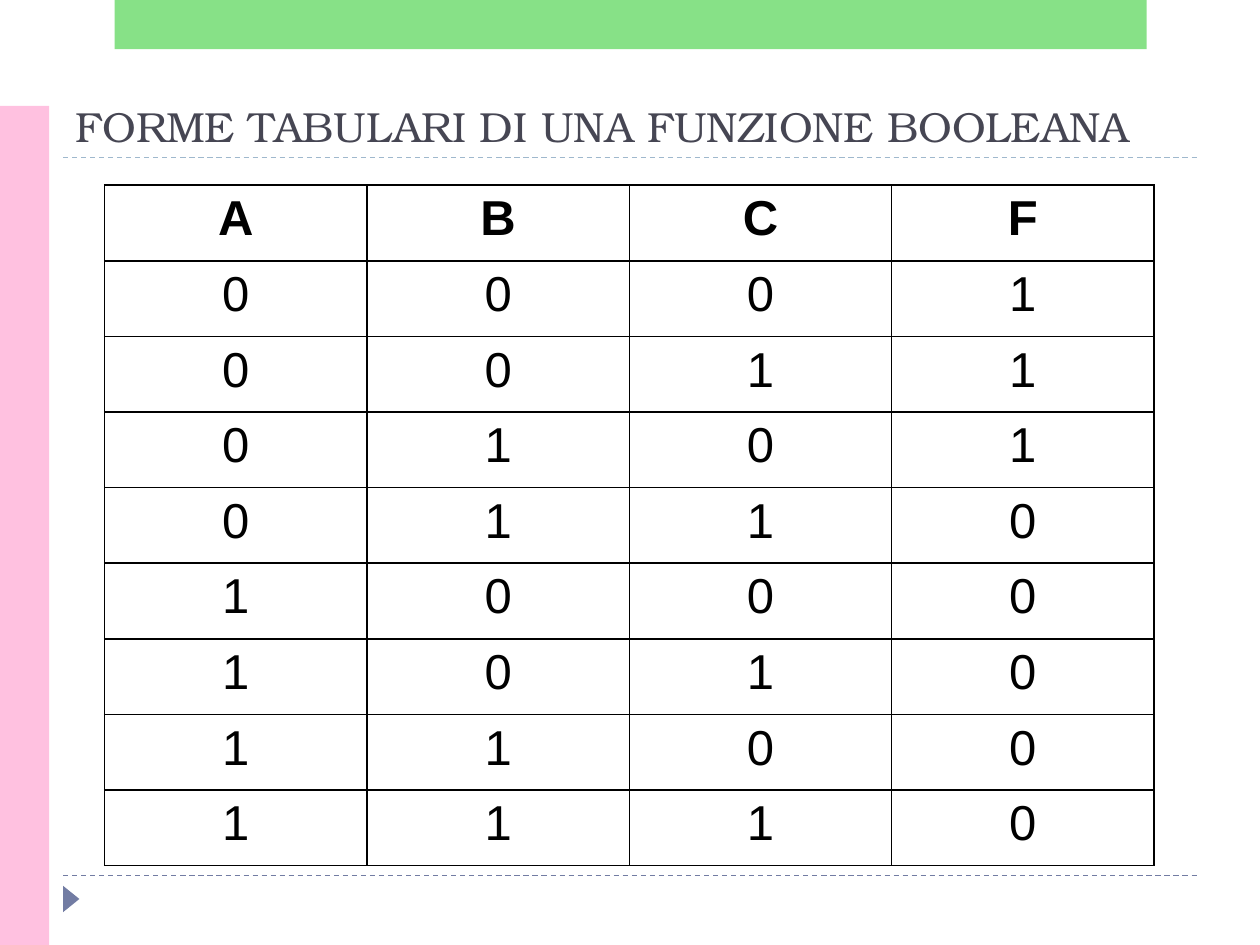
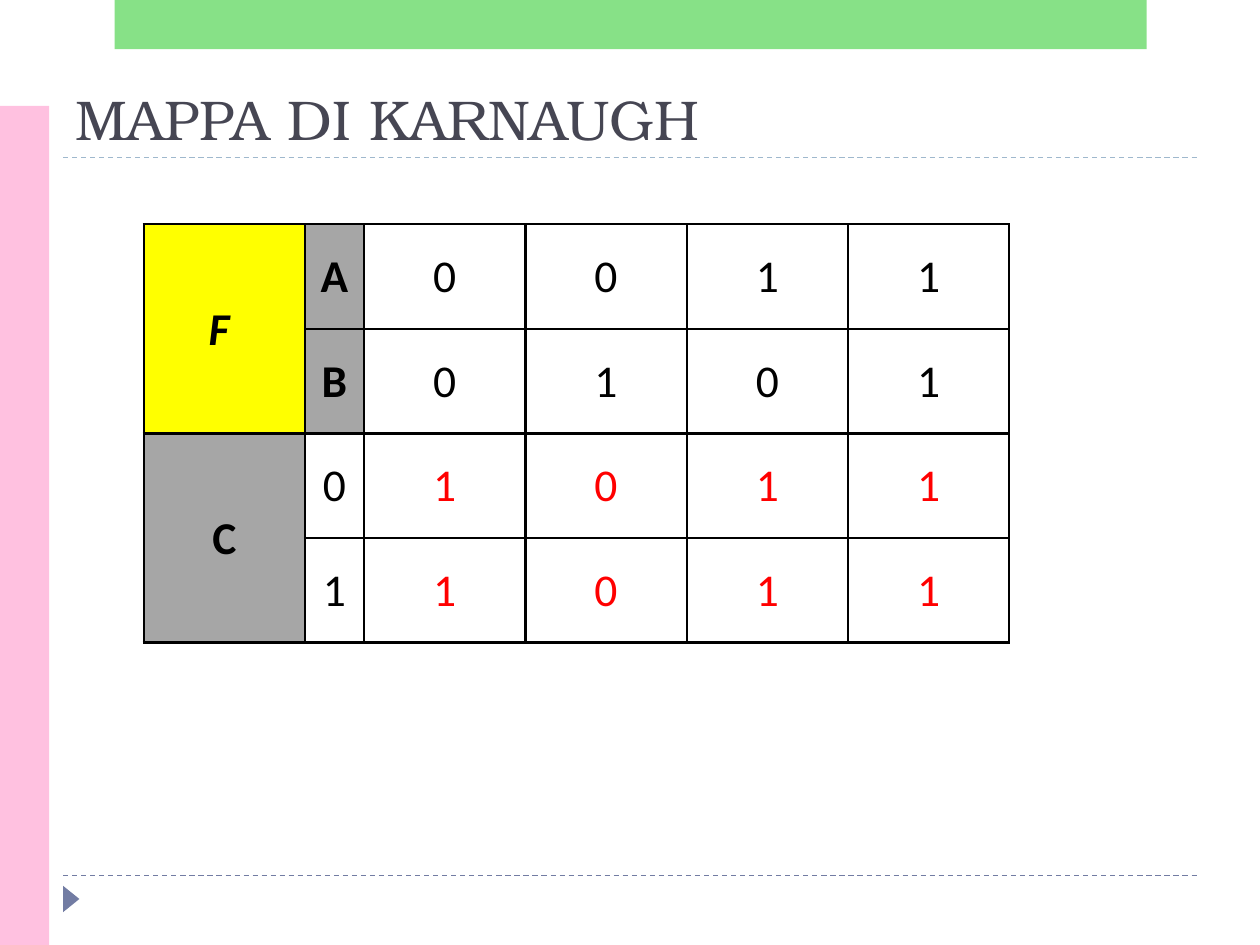
from dataclasses import dataclass
from itertools import product

from lxml import etree
from pptx import Presentation
from pptx.dml.color import RGBColor
from pptx.enum.dml import MSO_LINE
from pptx.enum.shapes import MSO_CONNECTOR, MSO_SHAPE
from pptx.enum.text import MSO_ANCHOR, PP_ALIGN
from pptx.oxml.ns import qn
from pptx.util import Inches, Pt

STRAIGHT = MSO_CONNECTOR.STRAIGHT
RECTANGLE = MSO_SHAPE.RECTANGLE
TRIANGLE = MSO_SHAPE.ISOSCELES_TRIANGLE
DASH = MSO_LINE.DASH
LEFT, CENTER = PP_ALIGN.LEFT, PP_ALIGN.CENTER
TOP, MIDDLE, BOTTOM = MSO_ANCHOR.TOP, MSO_ANCHOR.MIDDLE, MSO_ANCHOR.BOTTOM


@dataclass(frozen=True)
class Theme:
    title_font: str = "TeX Gyre Bonum"
    truth_font: str = "Arial"
    map_font: str = "Calibri"
    title_size: int = 32
    long_title_size: int = 24
    truth_size: int = 28
    map_size: int = 26
    title: str = "464653"
    ink: str = "000000"
    value: str = "FF0000"
    title_rule: str = "9FB8CD"
    accent: str = "727CA3"
    side_band: str = "FFC1E0"
    top_band: str = "62D862"
    function_fill: str = "FFFF00"
    variable_fill: str = "A6A6A6"


THEME = Theme()


def write(frame, text, *, font, size, color, bold=False, italic=False, align=LEFT):
    paragraph = frame.paragraphs[0]
    paragraph.alignment = align
    run = paragraph.add_run()
    run.text = text
    run.font.name = font
    run.font.size = Pt(size)
    run.font.bold = bold
    run.font.italic = italic
    run.font.color.rgb = RGBColor.from_string(color)


def set_borders(cell, color, width):
    properties = cell._tc.get_or_add_tcPr()
    for side in ("lnL", "lnR", "lnT", "lnB"):
        border = etree.SubElement(properties, qn(f"a:{side}"), w=str(Pt(width)))
        fill = etree.SubElement(border, qn("a:solidFill"))
        etree.SubElement(fill, qn("a:srgbClr"), val=color)


class Deck:
    def __init__(self, theme):
        self.theme = theme
        self.presentation = Presentation()
        self.presentation.slide_width = Inches(10)
        self.presentation.slide_height = Inches(7.5)
        self.slide = None

    def new_slide(self, title, title_size):
        """Start a slide with the shared rules, bands, marker and title."""
        theme = self.theme
        self.slide = self.presentation.slides.add_slide(self.presentation.slide_layouts[6])
        self.rule(6.95, theme.accent)
        self.rule(1.25, theme.title_rule)
        self.shape(TRIANGLE, 0.46, 7.07, 0.21, 0.13, theme.accent, rotation=90)
        self.shape(RECTANGLE, 0, 0.84, 0.39, 6.66, theme.side_band)
        self.shape(RECTANGLE, 0.91, 0, 8.19, 0.39, theme.top_band, opacity=76)
        self.title(title, title_size)

    def rule(self, y, color):
        line = self.slide.shapes.add_connector(
            STRAIGHT, Inches(0.5), Inches(y), Inches(9.5), Inches(y))
        line.line.color.rgb = RGBColor.from_string(color)
        line.line.width = Pt(0.75)
        line.line.dash_style = DASH
        etree.SubElement(line._element.spPr, qn("a:effectLst"))

    def shape(self, kind, left, top, width, height, color, rotation=0, opacity=100):
        shape = self.slide.shapes.add_shape(
            kind, Inches(left), Inches(top), Inches(width), Inches(height))
        shape.shadow.inherit = False
        shape.rotation = rotation
        shape.line.fill.background()
        shape.fill.solid()
        shape.fill.fore_color.rgb = RGBColor.from_string(color)
        if opacity < 100:
            tint = shape._element.spPr.find(f".//{qn('a:srgbClr')}")
            etree.SubElement(tint, qn("a:alpha"), val=str(opacity * 1000))

    def title(self, text, size):
        box = self.slide.shapes.add_textbox(Inches(0.5), Inches(0.55), Inches(9), Inches(0.7))
        frame = box.text_frame
        frame.word_wrap = True
        frame.vertical_anchor = BOTTOM
        write(frame, text, font=self.theme.title_font, size=size, color=self.theme.title)

    def table(self, left, top, widths, row_height, rows, style, *, border,
              merges=(), anchor=TOP, margins=None):
        """Draw rows of text; style(row, column) gives the cell fill and text format."""
        table = self.slide.shapes.add_table(
            len(rows), len(widths), Inches(left), Inches(top),
            Inches(sum(widths)), Inches(row_height * len(rows))).table
        table.first_row = table.horz_banding = False
        for column, width in zip(table.columns, widths):
            column.width = Inches(width)
        for row in table.rows:
            row.height = Inches(row_height)
        for start, end in merges:
            table.cell(*start).merge(table.cell(*end))
        for r, row in enumerate(rows):
            for c, text in enumerate(row):
                cell = table.cell(r, c)
                fill, text_format = style(r, c)
                set_borders(cell, self.theme.ink, border)
                if fill:
                    cell.fill.solid()
                    cell.fill.fore_color.rgb = RGBColor.from_string(fill)
                else:
                    cell.fill.background()
                cell.vertical_anchor = anchor
                if margins:
                    (cell.margin_left, cell.margin_top,
                     cell.margin_right, cell.margin_bottom) = map(Inches, margins)
                if text:
                    write(cell.text_frame, text, align=CENTER, **text_format)


def truth_style(row, column):
    return None, dict(font=THEME.truth_font, size=THEME.truth_size,
                      color=THEME.ink, bold=row == 0)


def map_style(row, column):
    is_function = column == 0 and row < 2
    is_variable = not is_function and (column == 0 or (column == 1 and row < 2))
    is_value = row >= 2 and column >= 2
    fill = (THEME.function_fill if is_function
            else THEME.variable_fill if is_variable else None)
    return fill, dict(font=THEME.map_font, size=THEME.map_size,
                      color=THEME.value if is_value else THEME.ink,
                      bold=is_function or is_variable, italic=is_function)


def truth_table_slide(deck):
    deck.new_slide("FORME TABULARI DI UNA FUNZIONE BOOLEANA", THEME.long_title_size)
    outputs = "11100000"
    rows = ["ABCF"] + [(*inputs, output)
                       for inputs, output in zip(product("01", repeat=3), outputs)]
    deck.table(0.83, 1.47, [8.33 / 4] * 4, 0.6, rows, truth_style, border=1)


def karnaugh_slide(deck):
    deck.new_slide("MAPPA DI KARNAUGH", THEME.title_size)
    rows = [
        ("F ", "A", *"0011"),
        ("", "B", *"0101"),
        ("C", "0", *"1011"),
        ("", "1", *"1011"),
    ]
    deck.table(1.14, 1.78, [1.28, 0.47] + [1.28] * 4, 0.83, rows, map_style,
               border=1.5, merges=[((0, 0), (1, 0)), ((2, 0), (3, 0))],
               anchor=MIDDLE, margins=(0.01, 0.01, 0.01, 0))


def main():
    deck = Deck(THEME)
    truth_table_slide(deck)
    karnaugh_slide(deck)
    deck.presentation.save("out.pptx")


if __name__ == "__main__":
    main()
